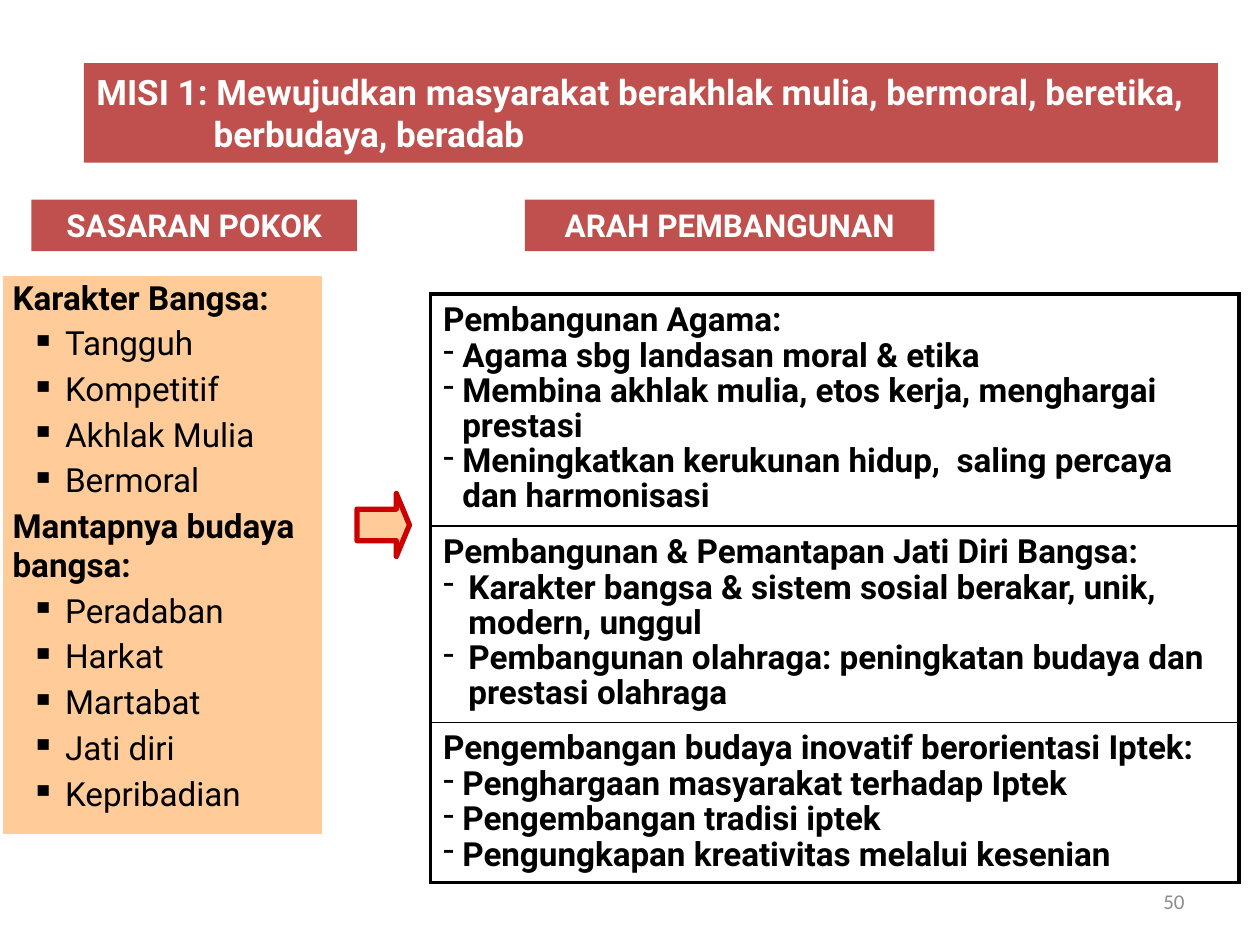
from dataclasses import dataclass

from lxml import etree
from pptx import Presentation
from pptx.dml.color import RGBColor
from pptx.enum import shapes, text
from pptx.oxml import ns
from pptx.util import Pt


@dataclass(frozen=True)
class Theme:
    red: str = "C0504D"
    peach: str = "FFCC99"
    arrow_line: str = "CC0000"
    black: str = "000000"
    white: str = "FFFFFF"
    grey: str = "8C8C8C"
    font: str = "Roboto"
    number_font: str = "Calibri"
    title_size: float = 20
    body_size: float = 19
    label_size: float = 18
    number_size: float = 12
    paragraph_gap: float = 3.8
    tight_lines: float = 0.9


class SlideBuilder:
    def __init__(self, page, theme):
        self.page = page
        self.theme = theme

    def style(self, para, size, color, bold=False, font=None):
        for span in para.runs:
            span.font.name = font or self.theme.font
            span.font.size = Pt(size)
            span.font.bold = bold
            span.font.color.rgb = RGBColor.from_string(color)

    def indent(self, para, margin, hanging, bullet=None):
        properties = para._p.get_or_add_pPr()
        properties.set("marL", str(Pt(margin)))
        properties.set("indent", str(-Pt(hanging)))
        if bullet:
            etree.SubElement(properties, ns.qn("a:buChar")).set("char", bullet)

    def shape(self, kind, bounds, fill):
        shape = self.page.shapes.add_shape(kind, *map(Pt, bounds))
        shape.shadow.inherit = False
        shape.fill.solid()
        shape.fill.fore_color.rgb = RGBColor.from_string(fill)
        shape.line.fill.background()
        return shape

    def banner(self, bounds, words, size, hanging=0):
        box = self.shape(shapes.MSO_SHAPE.RECTANGLE, bounds, self.theme.red)
        frame = box.text_frame
        frame.text = words
        frame.word_wrap = True
        frame.vertical_anchor = text.MSO_ANCHOR.MIDDLE
        para = frame.paragraphs[0]
        para.alignment = text.PP_ALIGN.LEFT if hanging else text.PP_ALIGN.CENTER
        self.indent(para, hanging, hanging)
        self.style(para, size, self.theme.white, bold=True)

    def arrow(self, bounds):
        arrow = self.shape(shapes.MSO_SHAPE.RIGHT_ARROW, bounds, self.theme.peach)
        arrow.adjustments[0] = 0.5
        arrow.adjustments[1] = 0.25
        arrow.line.color.rgb = RGBColor.from_string(self.theme.arrow_line)
        arrow.line.width = Pt(3)

    def page_number(self, bounds, words):
        frame = self.page.shapes.add_textbox(*map(Pt, bounds)).text_frame
        frame.text = words
        frame.word_wrap = True
        frame.vertical_anchor = text.MSO_ANCHOR.MIDDLE
        para = frame.paragraphs[0]
        para.alignment = text.PP_ALIGN.RIGHT
        self.style(para, self.theme.number_size, self.theme.grey,
                   font=self.theme.number_font)

    def table(self, left, top, width, heights):
        frame = self.page.shapes.add_table(
            len(heights), 1, Pt(left), Pt(top), Pt(width), Pt(sum(heights)))
        table = frame.table
        table.first_row = table.horz_banding = False
        for row, height in zip(table.rows, heights):
            row.height = Pt(height)
        return [row.cells[0] for row in table.rows]

    def cell_box(self, cell, color, widths, fill=None):
        """Border widths come in the order left, right, top, bottom."""
        properties = cell._tc.get_or_add_tcPr()
        for side, width in zip("LRTB", widths):
            line = etree.SubElement(properties, ns.qn(f"a:ln{side}"), w=str(Pt(width)))
            solid = etree.SubElement(line, ns.qn("a:solidFill"))
            etree.SubElement(solid, ns.qn("a:srgbClr"), val=color)
        if fill:
            cell.fill.solid()
            cell.fill.fore_color.rgb = RGBColor.from_string(fill)
        else:
            cell.fill.background()

    def cell_lines(self, cell, lines):
        frame = cell.text_frame
        frame.text = "\n".join(lines)
        for para in frame.paragraphs:
            self.style(para, self.theme.body_size, self.theme.black, bold=True)
        return frame.paragraphs

    def goals(self, cell, groups):
        lines = [line for heading, items in groups for line in (heading, *items)]
        headings = [heading for heading, _ in groups]
        for number, para in enumerate(self.cell_lines(cell, lines)):
            if number:
                para.space_before = Pt(self.theme.paragraph_gap)
            if para.text not in headings:
                self.indent(para, 30, 19.5, "▪")
                self.style(para, self.theme.body_size, self.theme.black)

    def direction(self, cell, heading, items, hanging):
        first, *rest = self.cell_lines(cell, [heading, *items])
        self.indent(first, hanging, hanging)
        for para in rest:
            para.line_spacing = self.theme.tight_lines
            self.indent(para, hanging, hanging, "-")


GOALS = [
    ("Karakter Bangsa:", ["Tangguh", "Kompetitif", "Akhlak Mulia", "Bermoral"]),
    ("Mantapnya budaya bangsa:",
     ["Peradaban", "Harkat", "Martabat", "Jati diri", "Kepribadian"]),
]

# Row height, hanging indent, heading, items
DIRECTIONS = [
    (131, 11, "Pembangunan Agama:",
     ["Agama sbg landasan moral & etika",
      "Membina akhlak mulia, etos kerja, menghargai prestasi",
      "Meningkatkan kerukunan hidup,  saling percaya dan harmonisasi"]),
    (111, 14.5, "Pembangunan & Pemantapan Jati Diri Bangsa:",
     ["Karakter bangsa & sistem sosial berakar, unik, modern, unggul",
      "Pembangunan olahraga: peningkatan budaya dan prestasi olahraga"]),
    (91, 11, "Pengembangan budaya inovatif berorientasi Iptek:",
     ["Penghargaan masyarakat terhadap Iptek",
      "Pengembangan tradisi iptek",
      "Pengungkapan kreativitas melalui kesenian"]),
]


def main():
    deck = Presentation()
    deck.slide_width, deck.slide_height = Pt(720), Pt(540)
    theme = Theme()
    builder = SlideBuilder(deck.slides.add_slide(deck.slide_layouts[6]), theme)

    builder.page_number((516, 500.5, 168, 29), "50")

    # Main goals
    goal_cell, = builder.table(0, 156, 186, [322.5])
    builder.cell_box(goal_cell, theme.white, [4.5] * 4, theme.peach)
    builder.goals(goal_cell, GOALS)

    # Development directions: thick frame, thin rules between rows
    cells = builder.table(246, 168, 462, [entry[0] for entry in DIRECTIONS])
    for cell, (_, hanging, heading, items) in zip(cells, DIRECTIONS):
        top = 2.25 if cell is cells[0] else 1
        bottom = 2.25 if cell is cells[-1] else 1
        builder.cell_box(cell, theme.black, [2.25, 2.25, top, bottom])
        builder.direction(cell, heading, items, hanging)

    # Title and column labels
    builder.banner((48, 36, 648, 57),
                   "MISI 1: Mewujudkan masyarakat berakhlak mulia, bermoral, "
                   "beretika, berbudaya, beradab", theme.title_size, hanging=67)
    for left, width, label in [(18, 186, "SASARAN POKOK"),
                               (300, 234, "ARAH PEMBANGUNAN")]:
        builder.banner((left, 114, width, 29.5), label, theme.label_size)

    # Link from goals to directions
    builder.arrow((204, 282, 30, 36))

    deck.save("out.pptx")


if __name__ == "__main__":
    main()
